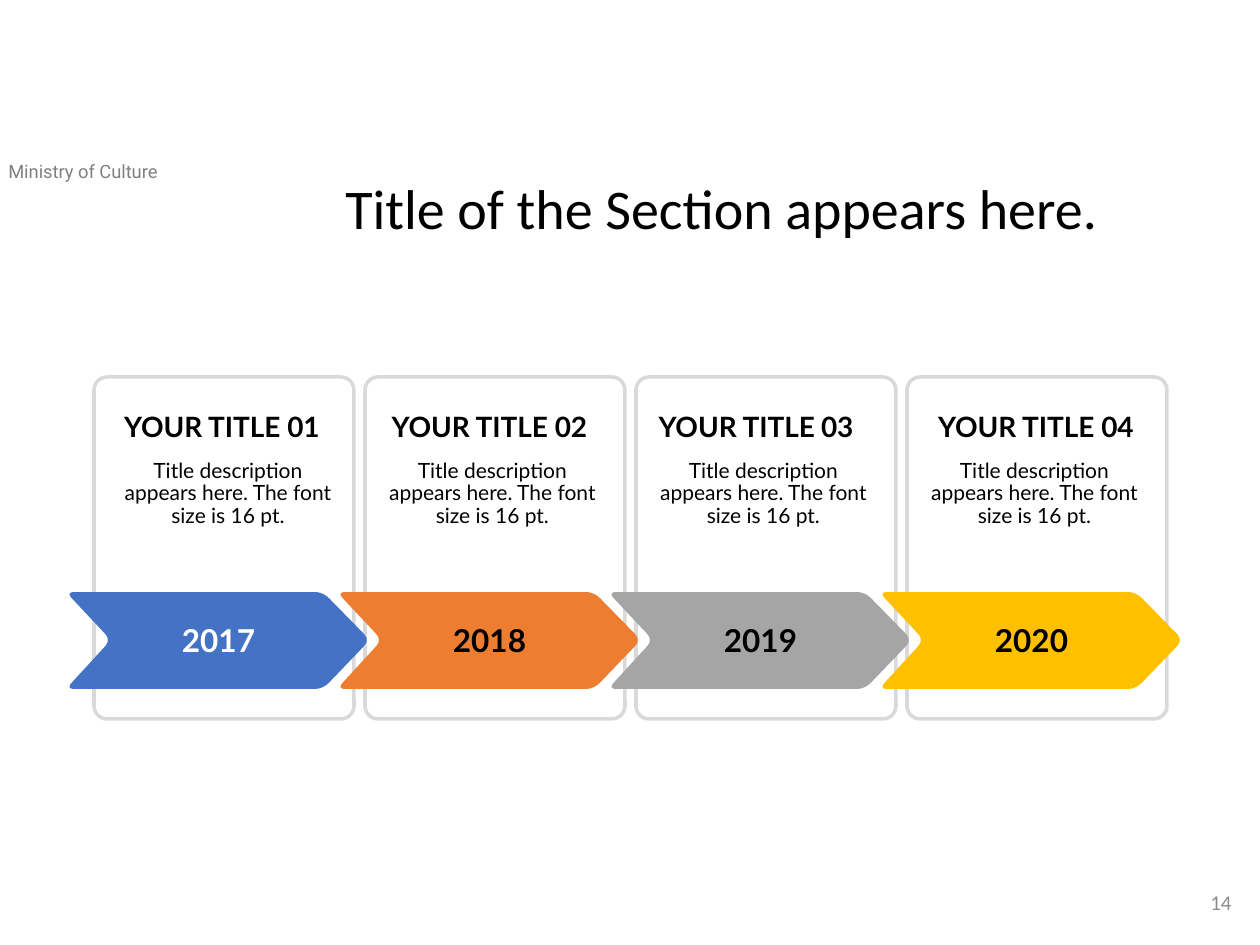
import pptx
import pptx.dml.color
import pptx.enum.shapes
import pptx.enum.text
import pptx.util

ALIGN = pptx.enum.text.PP_ALIGN
ANCHOR = pptx.enum.text.MSO_ANCHOR


def px(n):
    return pptx.util.Emu(round(n * 914400 / 126))


def color(value):
    return pptx.dml.color.RGBColor.from_string(value)


def rounded(corners, cut, steps=6):
    points = []
    for i, (x, y) in enumerate(corners):
        ends = []
        for nx, ny in (corners[i - 1], corners[(i + 1) % len(corners)]):
            length = ((nx - x) ** 2 + (ny - y) ** 2) ** 0.5
            ends.append((x + (nx - x) * cut / length, y + (ny - y) * cut / length))
        (ax, ay), (bx, by) = ends
        for k in range(steps + 1):
            t = k / steps
            a, m, b = (1 - t) ** 2, 2 * t * (1 - t), t ** 2
            points.append((a * ax + m * x + b * bx, a * ay + m * y + b * by))
    return points


class Timeline:
    """Slide in progress with the fonts and colours of a yearly timeline."""

    font = "Lato"
    ink = "000000"
    border = "D9D9D9"

    def __init__(self, prs):
        self.s = prs.slides.add_slide(prs.slide_layouts[6])

    def card(self, x, y, w, h):
        kind = pptx.enum.shapes.MSO_SHAPE.ROUNDED_RECTANGLE
        sp = self.s.shapes.add_shape(kind, px(x), px(y), px(w), px(h))
        sp.adjustments[0] = 0.05
        sp.shadow.inherit = False
        sp.fill.background()
        sp.line.color.rgb = color(self.border)
        sp.line.width = pptx.util.Pt(2)

    def arrow(self, x, y, fill):
        corners = [(0, 0), (257, 0), (304, 48), (257, 97), (0, 97), (45, 48)]
        points = [(px(x + dx), px(y + dy)) for dx, dy in rounded(corners, 9)]
        builder = self.s.shapes.build_freeform(*points[0])
        builder.add_line_segments(points[1:], close=True)
        sp = builder.convert_to_shape()
        sp.shadow.inherit = False
        sp.fill.solid()
        sp.fill.fore_color.rgb = color(fill)
        sp.line.fill.background()

    def text(self, box, runs, ink=ink, font=font, bold=False, align=ALIGN.CENTER,
             anchor=ANCHOR.TOP, spacing=None, margins=None):
        sp = self.s.shapes.add_textbox(*map(px, box))
        tf = sp.text_frame
        tf.word_wrap = True
        tf.vertical_anchor = anchor
        if margins:
            tf.margin_left = tf.margin_right = px(margins[0])
            tf.margin_top = tf.margin_bottom = px(margins[1])
        p = tf.paragraphs[0]
        p.alignment = align
        if spacing:
            p.line_spacing = spacing
        for words, size in runs:
            r = p.add_run()
            r.text = words
            r.font.name = font
            r.font.size = pptx.util.Pt(size)
            r.font.bold = bold
            r.font.color.rgb = color(ink)


def main():
    prs = pptx.Presentation()
    prs.slide_width, prs.slide_height = px(1260), px(945)
    slide = Timeline(prs)
    pitch = 271
    description = "Title description appears here. The font size is 16 pt."
    steps = [
        ("2017", "4472C4", "FFFFFF", (103, 238), (111, 234), [("YOUR TITLE 01", 16)]),
        ("2018", "ED7D31", "000000", (375, 229), (381, 223), [("YOUR TITLE 02", 16)]),
        ("2019", "A5A5A5", "000000", (639, 234), (652, 223),
         [("YOUR", 16), (" ", 14), ("TITLE", 16), (" ", 14), ("03", 16)]),
        ("2020", "FFC000", "000000", (917, 238), (923, 223), [("YOUR TITLE 04", 16)]),
    ]

    slide.text((-4, 154, 275, 35), [("Ministry of Culture", 10.5)], "808080", "Roboto",
               align=ALIGN.LEFT)
    for i in range(len(steps)):
        slide.card(94 + i * pitch, 377, 260, 342)
    for i, (year, fill, *rest) in enumerate(steps):
        slide.arrow(66 + i * pitch, 592, fill)
    for i, (year, fill, ink, (hx, hw), (dx, dw), heading) in enumerate(steps):
        slide.text((166 + i * pitch, 615, 105, 50), [(year, 18)], ink, bold=True,
                   anchor=ANCHOR.MIDDLE)
        slide.text((dx, 457, dw, 73), [(description, 12)], spacing=0.9, margins=(5, 3))
        slide.text((hx, 402, hw, 47), heading, bold=True, anchor=ANCHOR.BOTTOM)
    slide.text((960, 877, 284, 50), [("14", 12)], "8C8C8C", "Calibri",
               align=ALIGN.RIGHT, anchor=ANCHOR.MIDDLE)
    slide.text((333, 175, 834, 100), [("Title of the Section appears here.", 32)],
               font="Calibri", align=ALIGN.LEFT, spacing=0.9)
    prs.save("out.pptx")


if __name__ == "__main__":
    main()
